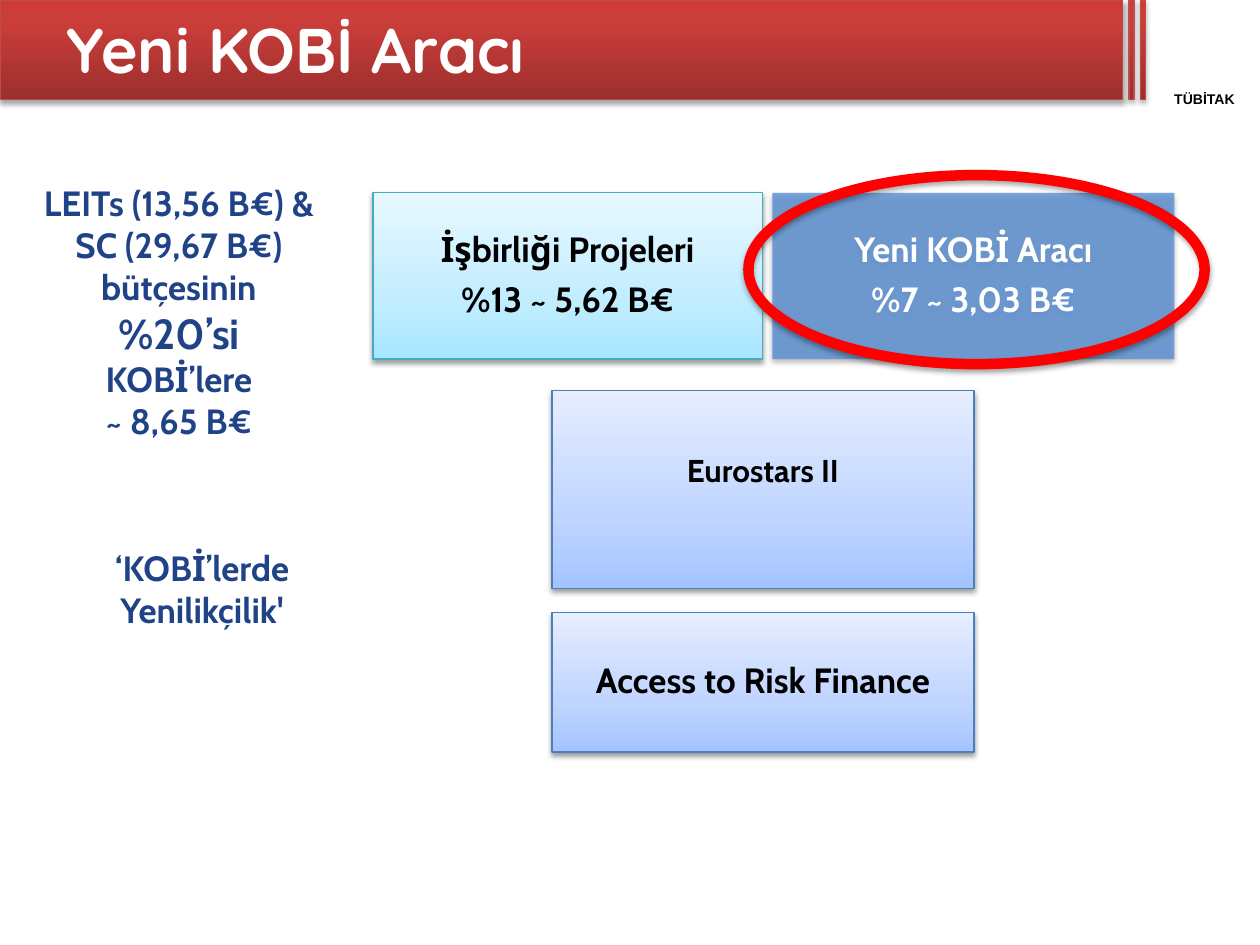
from dataclasses import dataclass

from lxml.etree import SubElement
from pptx import Presentation
from pptx.dml.color import RGBColor
from pptx.enum.shapes import MSO_SHAPE as Shape
from pptx.enum.text import MSO_ANCHOR as Anchor, PP_ALIGN as Align
from pptx.oxml.ns import qn
from pptx.util import Inches, Pt

COLUMNS, ROWS = 100, 75
CELL = Inches(0.1)


@dataclass(frozen=True)
class Theme:
    heading_font: str = "Quicksand"
    body_font: str = "Cabin"
    label_font: str = "Arial"
    title_size: int = 36
    emphasis_size: int = 24
    body_size: int = 20
    small_size: int = 18
    label_size: int = 8
    white: str = "FFFFFF"
    black: str = "000000"
    navy: str = "204388"
    ring: str = "FF0000"
    instrument: str = "558ED5"
    banner_line: str = "BF4C48"
    cyan_line: str = "46AAC5"
    blue_line: str = "4B7EBC"
    banner: tuple = ((0, "9C2F2D"), (80, "CB3E3A"), (100, "CE3B37"))
    cyan: tuple = ((0, "A7E6FF"), (35, "C1EDFF"), (100, "E7F8FF"))
    blue: tuple = ((0, "A4C4FF"), (35, "BFD4FF"), (100, "E6EEFF"))


THEME = Theme()


@dataclass(frozen=True)
class Box:
    """A rectangle in grid columns and rows."""
    left: float
    top: float
    width: float
    height: float

    def inner(self, left, top, width, height):
        return Box(self.left + left, self.top + top, width, height)

    def lengths(self):
        return [round(value * CELL) for value in
                (self.left, self.top, self.width, self.height)]


def color(value):
    return RGBColor.from_string(value)


def add_shadow(shape, opacity=35):
    shape.shadow.inherit = False
    effects = shape._element.spPr.find(qn("a:effectLst"))
    outer = SubElement(effects, qn("a:outerShdw"), blurRad="40000", dist="22000",
                       dir="5400000", rotWithShape="0")
    black = SubElement(outer, qn("a:srgbClr"), val=THEME.black)
    SubElement(black, qn("a:alpha"), val=str(opacity * 1000))


def fill_gradient(shape, stops):
    """Fill from the bottom edge up, with stops in percent."""
    shape.fill.gradient()
    shape.fill.gradient_angle = 90
    stop_list = shape._element.spPr.find(qn("a:gradFill")).find(qn("a:gsLst"))
    for old_stop in list(stop_list):
        stop_list.remove(old_stop)
    for position, value in stops:
        stop = SubElement(stop_list, qn("a:gs"), pos=str(position * 1000))
        SubElement(stop, qn("a:srgbClr"), val=value)


def add_gradient_box(slide, box, stops, line, opacity=35):
    shape = slide.shapes.add_shape(Shape.RECTANGLE, *box.lengths())
    fill_gradient(shape, stops)
    shape.line.color.rgb = color(line)
    shape.line.width = Pt(0.75)
    add_shadow(shape, opacity)
    return shape


def set_font(font, name, size, value):
    font.name, font.size, font.bold = name, Pt(size), True
    font.color.rgb = color(value)


def add_text(slide, box, paragraphs, name, size, value, align=Align.CENTER,
             anchor=Anchor.TOP, inset=None):
    """Write paragraphs, each a list of (text, size or None) runs."""
    frame = slide.shapes.add_textbox(*box.lengths()).text_frame
    frame.word_wrap = True
    frame.vertical_anchor = anchor
    if inset is not None:
        frame.margin_left = frame.margin_right = Inches(inset)
        frame.margin_top = frame.margin_bottom = Inches(inset)
    for index, runs in enumerate(paragraphs):
        paragraph = frame.add_paragraph() if index else frame.paragraphs[0]
        paragraph.alignment = align
        set_font(paragraph.font, name, size, value)
        for text, run_size in runs:
            run = paragraph.add_run()
            run.text = text
            if run_size:
                run.font.size = Pt(run_size)


def label_box(shape, lines, size, value, lift=0):
    """Centre the lines in a box; lift adds inches of margin below them."""
    frame = shape.text_frame
    frame.word_wrap = True
    frame.vertical_anchor = Anchor.MIDDLE
    frame.margin_left = frame.margin_right = frame.margin_top = Inches(0.08)
    frame.margin_bottom = Inches(0.08 + lift)
    for index, line in enumerate(lines):
        paragraph = frame.add_paragraph() if index else frame.paragraphs[0]
        paragraph.text = line
        paragraph.alignment = Align.CENTER
        paragraph.line_spacing = 0.9
        paragraph.space_after = Pt(0.35 * size)
        set_font(paragraph.font, THEME.body_font, size, value)


def add_header(slide, box):
    for left, width in ((0, 89.1), (89.6, 0.4), (90.5, 0.4)):
        add_gradient_box(slide, box.inner(left, 0, width, box.height),
                         THEME.banner, THEME.banner_line)
    add_text(slide, box.inner(91.2, 7.2, 8.8, 1.3), [[("TÜBİTAK", None)]],
             THEME.label_font, THEME.label_size, THEME.black, inset=0)
    add_text(slide, box.inner(4.3, 0, 85, 7.7), [[("Yeni KOBİ Aracı", None)]],
             THEME.heading_font, THEME.title_size, THEME.white,
             align=Align.LEFT, anchor=Anchor.MIDDLE)


def add_budget_notes(slide, box):
    share = [[("LEITs (13,56 B€) & SC (29,67 B€) bütçesinin ", None),
              ("%20’si", THEME.emphasis_size)],
             [("KOBİ’lere", None)],
             [("~ 8,65 B€", None)]]
    innovation = [[("‘KOBİ’lerde Yenilikçilik'", None)]]
    for area, paragraphs in ((box.inner(0, 0, 24.2, 18.5), share),
                             (box.inner(0, 29, box.width, 7.7), innovation)):
        add_text(slide, area, paragraphs, THEME.body_font, THEME.body_size, THEME.navy)


def add_instrument(slide, box):
    shape = slide.shapes.add_shape(Shape.RECTANGLE, *box.lengths())
    shape.fill.solid()
    shape.fill.fore_color.rgb = color(THEME.instrument)
    fill_color = shape._element.spPr.find(qn("a:solidFill"))[0]
    SubElement(fill_color, qn("a:alpha"), val="77000")
    shape.line.fill.background()
    add_shadow(shape)
    label_box(shape, ["Yeni KOBİ Aracı", "%7 ~ 3,03 B€"], THEME.body_size, THEME.white)


def add_ring(slide, box):
    ring = slide.shapes.add_shape(Shape.OVAL, *box.lengths())
    ring.fill.background()
    ring.line.color.rgb = color(THEME.ring)
    ring.line.width = Pt(6)
    add_shadow(ring)


def add_programmes(slide, box):
    add_instrument(slide, box.inner(31.7, 1.4, 31.9, 13.2))
    cyan, blue = (THEME.cyan, THEME.cyan_line), (THEME.blue, THEME.blue_line)
    boxes = (
        (box.inner(0, 1.4, 30.9, 13.2), cyan,
         ["İşbirliği Projeleri", "%13 ~ 5,62 B€"], THEME.body_size, 0),
        (box.inner(14.2, 17.1, 33.5, 15.7), blue, ["Eurostars II"], THEME.small_size, 0.27),
        (box.inner(14.2, 34.7, 33.5, 11.1), blue,
         ["Access to Risk Finance"], THEME.body_size, 0),
    )
    for area, (stops, line), lines, size, lift in boxes:
        shape = add_gradient_box(slide, area, stops, line, opacity=38)
        label_box(shape, lines, size, THEME.black, lift)
    add_ring(slide, box.inner(29.8, 0, 36.2, 15))


def main():
    presentation = Presentation()
    presentation.slide_width = COLUMNS * CELL
    presentation.slide_height = ROWS * CELL
    slide = presentation.slides.add_slide(presentation.slide_layouts[6])
    add_header(slide, Box(0, 0, COLUMNS, 7.9))
    add_budget_notes(slide, Box(2.1, 13.9, 27.9, 36.7))
    add_programmes(slide, Box(29.6, 13.9, 66, 45.8))
    presentation.save("out.pptx")


if __name__ == "__main__":
    main()
